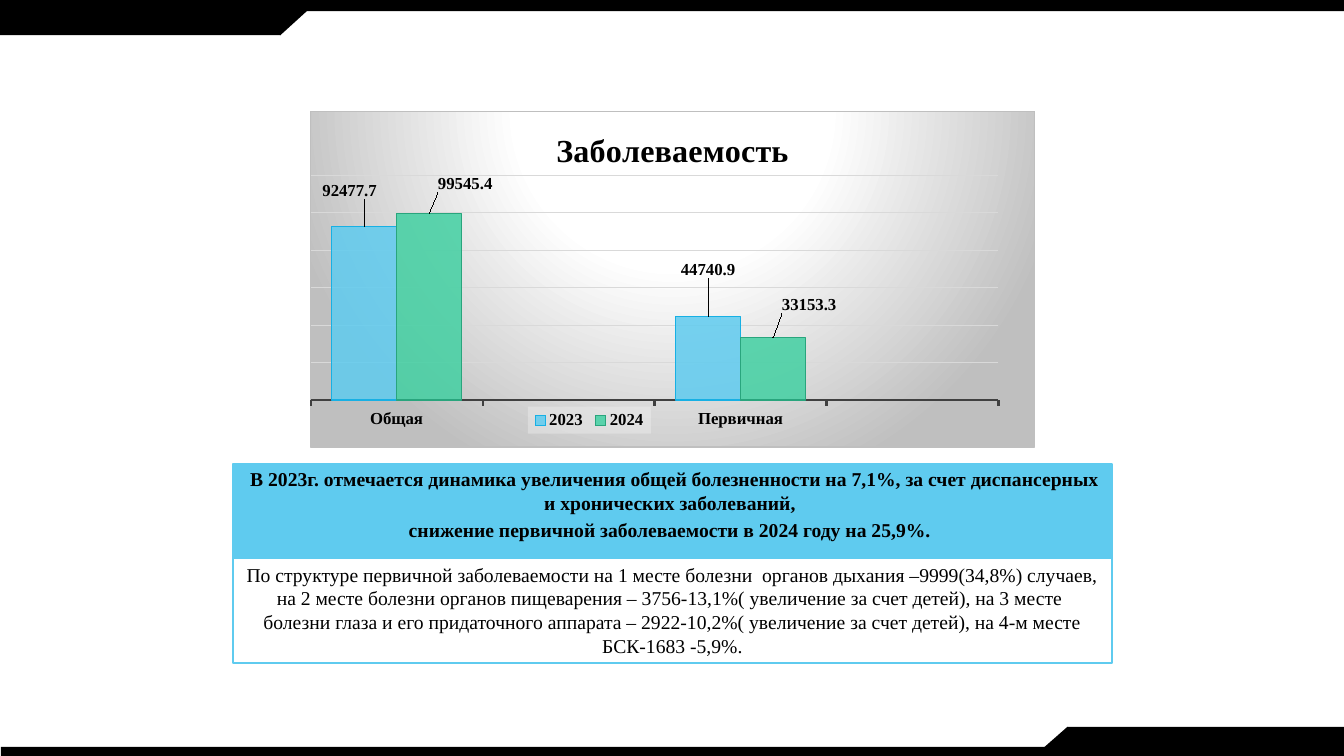
from dataclasses import dataclass

from lxml import etree
from pptx import Presentation
from pptx.chart.data import CategoryChartData
from pptx.dml.color import RGBColor
from pptx.enum.chart import XL_CHART_TYPE, XL_LABEL_POSITION, XL_LEGEND_POSITION, XL_TICK_MARK
from pptx.enum.shapes import MSO_SHAPE
from pptx.enum.text import MSO_ANCHOR, PP_ALIGN
from pptx.oxml import parse_xml
from pptx.oxml.ns import nsdecls, qn
from pptx.util import Inches, Pt

RECT, MERGE = MSO_SHAPE.RECTANGLE, MSO_SHAPE.FLOWCHART_MERGE
COLUMNS = XL_CHART_TYPE.COLUMN_CLUSTERED
OUTSIDE = XL_LABEL_POSITION.OUTSIDE_END
BOTTOM = XL_LEGEND_POSITION.BOTTOM
TICK_OUT, TICK_NONE = XL_TICK_MARK.OUTSIDE, XL_TICK_MARK.NONE
CENTER, TOP = PP_ALIGN.CENTER, MSO_ANCHOR.TOP
WIDTH, HEIGHT = Inches(13.33), Inches(7.5)


@dataclass(frozen=True)
class Theme:
    """Colours, font and type sizes of the slide."""
    font: str = "Times New Roman"
    ink: str = "000000"
    paper: str = "FFFFFF"
    blue: str = "5FCBEF"
    blue_edge: str = "17B0E4"
    green: str = "42D0A2"
    green_edge: str = "29A57D"
    axis: str = "404040"
    grid: str = "D9D9D9"
    edge: str = "BFBFBF"
    legend: str = "F2F2F2"
    title: float = 23
    body: float = 14
    label: float = 12


T = Theme()
CATEGORIES = ["Общая", "", "Первичная", ""]
SERIES = [
    ("2023", [92477.7, None, 44740.9, None], T.blue, T.blue_edge,
     {0: (-0.02, -0.07), 2: (0, -0.1)}),
    ("2024", [99545.4, None, 33153.3, None], T.green, T.green_edge,
     {0: (0.05, -0.05), 2: (0.05, -0.06)}),
]
TRENDS = [
    " В 2023г. отмечается динамика увеличения общей болезненности на 7,1%, "
    "за счет диспансерных и хронических заболеваний, ",
    "снижение первичной заболеваемости в 2024 году на 25,9%. ",
]
STRUCTURE = [
    "По структуре первичной заболеваемости на 1 месте болезни  органов дыхания "
    "–9999(34,8%) случаев, на 2 месте болезни органов пищеварения – 3756-13,1%"
    "( увеличение за счет детей), на 3 месте  болезни глаза и его придаточного "
    "аппарата – 2922-10,2%( увеличение за счет детей), на 4-м месте БСК-1683 -5,9%.",
]


def place(x, y, w, h):
    """Turn percentages of the slide's size into lengths."""
    return [int(side * share / 100) for side, share in
            zip((WIDTH, HEIGHT, WIDTH, HEIGHT), (x, y, w, h))]


def style_font(font, size, bold=True):
    """Give a font the theme's face and ink."""
    font.name, font.size, font.bold = T.font, Pt(size), bold
    font.color.rgb = RGBColor.from_string(T.ink)


def style_line(line, color, width):
    """Draw a solid line."""
    line.color.rgb = RGBColor.from_string(color)
    line.width = Pt(width)


def add_block(s, kind, box, fill, line=None):
    """Add a flat filled shape."""
    sp = s.shapes.add_shape(kind, *place(*box))
    sp.shadow.inherit = False
    sp.fill.solid()
    sp.fill.fore_color.rgb = RGBColor.from_string(fill)
    if line:
        style_line(sp.line, line, 1.5)
    else:
        sp.line.fill.background()
    return sp


def add_frame(s):
    """Draw the edge bands and the two slanted corner tabs."""
    for box in ((0, 0, 100, 1.47), (0.07, 98.8, 99.93, 1.2),
                (0, 0.67, 20.85, 4), (79.43, 96.13, 20.57, 3.87)):
        add_block(s, RECT, box, T.ink)
    add_block(s, MERGE, (18.38, 0.67, 4.95, 4), T.ink)
    add_block(s, MERGE, (76.95, 96.13, 4.95, 3.87), T.ink).rotation = 180


def add_note(s, box, fill, texts, inset, bold):
    """Add a bordered box of centred paragraphs."""
    tf = add_block(s, RECT, box, fill, T.blue).text_frame
    tf.word_wrap, tf.vertical_anchor = True, TOP
    tf.margin_left = tf.margin_right = Inches(inset)
    tf.margin_top = tf.margin_bottom = Inches(inset / 2)
    for i, text in enumerate(texts):
        p = tf.add_paragraph() if i else tf.paragraphs[0]
        p.alignment = CENTER
        if i:
            p.space_before = Pt(0.2 * T.body)
        r = p.add_run()
        r.text = text
        style_font(r.font, T.body, bold)


def set_layout(parent, index, inner=False, **sizes):
    """Put a manual layout at the given child index of a chart part."""
    for old in parent.findall(qn("c:layout")):
        parent.remove(old)
    layout = etree.Element(qn("c:layout"))
    manual = etree.SubElement(layout, qn("c:manualLayout"))
    if inner:
        etree.SubElement(manual, qn("c:layoutTarget")).set("val", "inner")
    if "w" in sizes:
        for tag in ("c:xMode", "c:yMode"):
            etree.SubElement(manual, qn(tag)).set("val", "edge")
    for name, value in sizes.items():
        etree.SubElement(manual, qn("c:" + name)).set("val", str(value))
    parent.insert(index, layout)


def fill_chart(chart):
    """Give the chart area its radial grey fill and thin border."""
    stops = "".join(f'<a:gs pos="{pos}"><a:srgbClr val="{color}"/></a:gs>' for pos, color in
                    ((0, T.paper), (39000, T.paper), (100000, T.edge)))
    chart.element.find(qn("c:chart")).addnext(parse_xml(
        f'<c:spPr {nsdecls("c", "a")}><a:gradFill><a:gsLst>{stops}</a:gsLst>'
        '<a:path path="circle"><a:fillToRect l="50000" t="-80000" r="50000" b="180000"/>'
        f'</a:path></a:gradFill><a:ln w="{Pt(0.75)}"><a:solidFill>'
        f'<a:srgbClr val="{T.edge}"/></a:solidFill></a:ln></c:spPr>'))


def style_series(series, color, edge, offsets):
    """Colour one series and place its value labels."""
    fill = series.format.fill
    fill.solid()
    fill.fore_color.rgb = RGBColor.from_string(color)
    tint = series.format.element.find(".//" + qn("a:srgbClr")) if hasattr(
        series.format, "element") else next(series._element.iter(qn("a:srgbClr")))
    etree.SubElement(tint, qn("a:alpha")).set("val", "85000")
    style_line(series.format.line, edge, 0.75)
    for i, (dx, dy) in offsets.items():
        label = series.points[i].data_label
        style_font(label.font, T.label)
        label.position = OUTSIDE
    for label, (dx, dy) in zip(series._element.iter(qn("c:dLbl")), offsets.values()):
        set_layout(label, 1, x=dx, y=dy)


def style_legend(chart):
    """Place the legend between the categories on a pale plate."""
    chart.has_legend = True
    legend = chart.legend
    legend.position, legend.include_in_layout = BOTTOM, False
    style_font(legend.font, T.label)
    node = chart.element.find(".//" + qn("c:legend"))
    set_layout(node, 1, x=0.3, y=0.88, w=0.17, h=0.08)
    node.find(qn("c:overlay")).addnext(parse_xml(
        f'<c:spPr {nsdecls("c", "a")}><a:solidFill><a:srgbClr val="{T.legend}">'
        '<a:alpha val="39000"/></a:srgbClr></a:solidFill></c:spPr>'))


def add_morbidity_chart(s, box):
    """Add the clustered columns of general and primary morbidity."""
    data = CategoryChartData()
    data.categories = CATEGORIES
    for name, values, *_ in SERIES:
        data.add_series(name, values)
    chart = s.shapes.add_chart(COLUMNS, *place(*box), data).chart
    style_font(chart.font, 10)
    fill_chart(chart)
    chart.has_title = True
    r = chart.chart_title.text_frame.paragraphs[0].add_run()
    r.text = "Заболеваемость"
    style_font(r.font, T.title)
    plot = chart.plots[0]
    plot.gap_width, plot.overlap, plot.vary_by_categories = 65, 0, False
    for series, (_, _, *look) in zip(plot.series, SERIES):
        style_series(series, *look)
    cat, val = chart.category_axis, chart.value_axis
    cat.major_tick_mark, cat.minor_tick_mark = TICK_OUT, TICK_NONE
    style_line(cat.format.line, T.axis, 1.5)
    style_font(cat.tick_labels.font, T.label)
    val.minimum_scale, val.maximum_scale, val.major_unit = 0, 120000, 20000
    val.visible, val.has_major_gridlines = False, True
    style_line(val.major_gridlines.format.line, T.grid, 0.75)
    style_legend(chart)
    set_layout(chart.element.find(".//" + qn("c:plotArea")), 0, True,
               x=0, y=0.19, w=0.95, h=0.67)


def main():
    """Build and save the slide."""
    prs = Presentation()
    prs.slide_width, prs.slide_height = WIDTH, HEIGHT
    s = prs.slides.add_slide(prs.slide_layouts[6])
    add_frame(s)
    add_morbidity_chart(s, (23.03, 14.67, 54, 44.53))
    add_note(s, (17.33, 61.33, 65.4, 12.53), T.blue, TRENDS, 0.07, True)
    add_note(s, (17.33, 73.8, 65.4, 13.87), T.paper, STRUCTURE, 0.1, False)
    prs.save("out.pptx")


if __name__ == "__main__":
    main()
